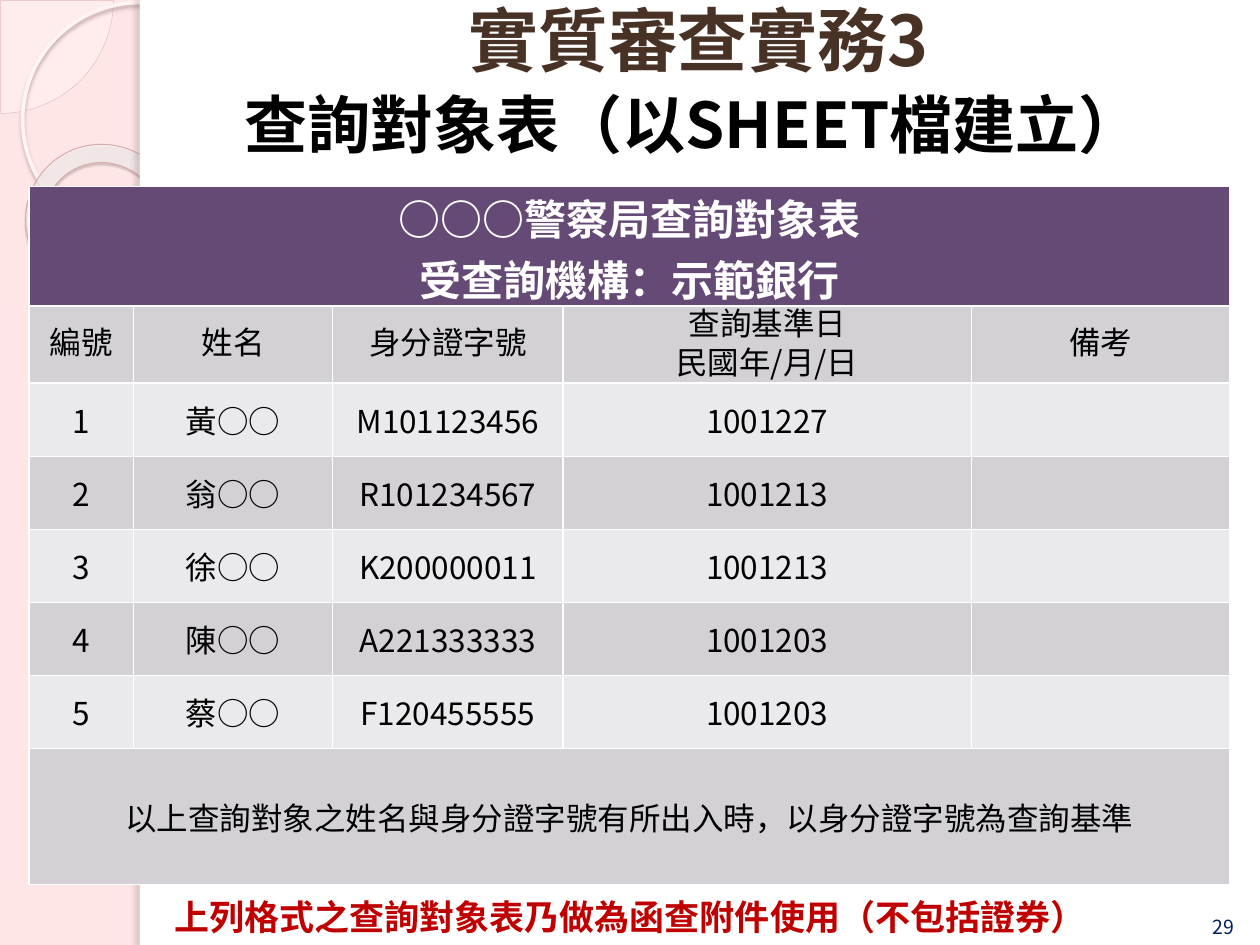
from dataclasses import dataclass

from lxml.etree import SubElement
from pptx import Presentation
from pptx.dml.color import RGBColor
from pptx.enum.shapes import MSO_SHAPE
from pptx.enum.text import MSO_ANCHOR, MSO_AUTO_SIZE, PP_ALIGN
from pptx.oxml import parse_xml
from pptx.oxml.ns import nsdecls, qn
from pptx.util import Inches, Pt


@dataclass(frozen=True)
class Theme:
    font: str = "Noto Sans CJK SC"
    back: str = "FFE6E6"
    white: str = "FFFFFF"
    black: str = "000000"
    brown: str = "483226"
    navy: str = "002060"
    red: str = "C00000"
    purple: str = "654A76"
    dark: str = "D3D0D6"
    light: str = "EAE9EC"
    head: float = 39.8
    title: float = 36
    cap: float = 24
    note: float = 20
    cell: float = 18
    page: float = 11.1


THEME = Theme()

COLS = [0.83, 1.58, 1.83, 3.24, 2.05]
ROWS = [0.95, 0.61] + [0.58] * 5 + [1.08]
CAPTION = "○○○警察局查詢對象表\n受查詢機構：示範銀行"
LABELS = ["編號", "姓名", "身分證字號", "查詢基準日\n民國年/月/日", "備考"]
PEOPLE = [
    ("黃○○", "M101123456", "1001227"),
    ("翁○○", "R101234567", "1001213"),
    ("徐○○", "K200000011", "1001213"),
    ("陳○○", "A221333333", "1001203"),
    ("蔡○○", "F120455555", "1001203"),
]
REMARK = "以上查詢對象之姓名與身分證字號有所出入時，以身分證字號為查詢基準"


def rgb(code):
    return RGBColor.from_string(code)


def write(frame, text, size, color, bold=False, space=None):
    """Put centred text in a frame and format its runs."""
    frame.text = text
    for para in frame.paragraphs:
        para.alignment = PP_ALIGN.CENTER
        if space:
            para.line_spacing = space
        for run in para.runs:
            font = run.font
            font.name, font.size, font.bold = THEME.font, Pt(size), bold
            font.color.rgb = rgb(color)
            latin = run._r.rPr.find(qn("a:latin"))
            latin.addnext(parse_xml(f'<a:ea {nsdecls("a")} typeface="{THEME.font}"/>'))


def place(shape, left, top, width, height):
    shape.left, shape.top = Inches(left), Inches(top)
    shape.width, shape.height = Inches(width), Inches(height)


def add_text(slide, box, text, size, color, anchor, bold=False, space=None):
    shape = slide.shapes.add_textbox(*map(Inches, box))
    frame = shape.text_frame
    frame.word_wrap = True
    frame.vertical_anchor = anchor
    write(frame, text, size, color, bold, space)


def add_form(slide, kind, box, fill=None, line=None, width=0):
    """Add a preset shape with a plain fill and line."""
    shape = slide.shapes.add_shape(kind, *map(Inches, box))
    shape.shadow.inherit = False
    if fill:
        shape.fill.solid()
        shape.fill.fore_color.rgb = rgb(fill)
    else:
        shape.fill.background()
    if line:
        shape.line.color.rgb = rgb(line)
        shape.line.width = Pt(width)
    else:
        shape.line.fill.background()
    return shape


def set_alpha(color, share):
    SubElement(color, qn("a:alpha"), val=str(share * 1000))


def cast(shape, color, share, blur, dist, angle):
    """Give a shape an outer shadow."""
    effects = shape._element.spPr.find(qn("a:effectLst"))
    outer = SubElement(effects, qn("a:outerShdw"), blurRad=str(Pt(blur)),
                       dist=str(Pt(dist)), dir=str(angle * 60000),
                       algn="tl", rotWithShape="0")
    set_alpha(SubElement(outer, qn("a:srgbClr"), val=color), share)


def fade(shape, stops):
    """Swap an empty fill for a round gradient with clear stops."""
    marks = "".join(
        f'<a:gs pos="{pos * 1000}"><a:srgbClr val="{color}">'
        f'<a:alpha val="{share * 1000}"/></a:srgbClr></a:gs>'
        for pos, color, share in stops)
    grad = parse_xml(
        f'<a:gradFill {nsdecls("a")} rotWithShape="1"><a:gsLst>{marks}</a:gsLst>'
        '<a:path path="circle"><a:fillToRect l="-408000" t="-50000" '
        'r="508000" b="150000"/></a:path></a:gradFill>')
    props = shape._element.spPr
    props.replace(props.find(qn("a:noFill")), grad)


def add_decor(slide):
    # Pink margin with a quarter disc, a circle and a ring
    pie = add_form(slide, MSO_SHAPE.PIE, (-0.89, -0.89, 1.79, 1.79),
                   "FFFBFB", "E5BABA", 0.25)
    pie.adjustments[0], pie.adjustments[1] = 0, 54.02
    set_alpha(pie._element.spPr.find(qn("a:solidFill"))[0], 33)

    loop = add_form(slide, MSO_SHAPE.OVAL, (0.18, 0.02, 1.86, 1.86),
                    line="FFF4F4", width=2.15)
    cast(loop, "C1A6A6", 85, 2, 2, 90)

    ring = add_form(slide, MSO_SHAPE.DONUT, (0.2, 1.15, 1.23, 1.21),
                    line="D8ACAC", width=0.58)
    ring.adjustments[0] = 0.12
    ring.rotation = 38.6
    fade(ring, [(0, "FFFAFA", 70), (70, "FFFEFE", 55), (100, "FFADAD", 60)])
    cast(ring, "625050", 35, 1, 1.2, 75)

    # White page and its shaded edge
    add_form(slide, MSO_SHAPE.RECTANGLE, (1.11, 0, 8.89, 7.5), THEME.white)
    edge = add_form(slide, MSO_SHAPE.RECTANGLE, (1.11, 0, 0.08, 7.5), THEME.white)
    cast(edge, "7F7272", 25, 3, 3, 180)


def fill_cell(cell, text, fill, size=THEME.cell, color=THEME.black,
              bold=False, space=None):
    cell.fill.solid()
    cell.fill.fore_color.rgb = rgb(fill)
    cell.vertical_anchor = MSO_ANCHOR.MIDDLE
    cell.margin_left = cell.margin_right = Inches(0.02)
    cell.margin_top = cell.margin_bottom = 0
    write(cell.text_frame, text, size, color, bold, space)


def add_grid(slide):
    box = (0.23, 1.48, sum(COLS), sum(ROWS))
    grid = slide.shapes.add_table(len(ROWS), len(COLS), *map(Inches, box)).table
    grid.horz_banding = False
    for col, width in zip(grid.columns, COLS):
        col.width = Inches(width)
    for row, height in zip(grid.rows, ROWS):
        row.height = Inches(height)

    # Caption and remark span the whole width
    last = len(ROWS) - 1
    for row in (0, last):
        grid.cell(row, 0).merge(grid.cell(row, len(COLS) - 1))
    fill_cell(grid.cell(0, 0), CAPTION, THEME.purple, THEME.cap, THEME.white, True)
    fill_cell(grid.cell(last, 0), REMARK, THEME.dark)

    # Labels, then one numbered row for each person
    for col, text in enumerate(LABELS):
        fill_cell(grid.cell(1, col), text, THEME.dark, space=Pt(22))
    for num, person in enumerate(PEOPLE, 1):
        fill = THEME.light if num % 2 else THEME.dark
        for col, text in enumerate((str(num), *person, "")):
            fill_cell(grid.cell(num + 1, col), text, fill)


def add_title(slide):
    title = slide.shapes.title
    place(title, 1, 0.55, 9, 0.85)
    frame = title.text_frame
    frame.auto_size = MSO_AUTO_SIZE.NONE
    frame.vertical_anchor = MSO_ANCHOR.MIDDLE
    write(frame, "查詢對象表（以SHEET檔建立）", THEME.title, THEME.black, True)


def main():
    deck = Presentation()
    deck.slide_width, deck.slide_height = Inches(10), Inches(7.5)
    slide = deck.slides.add_slide(deck.slide_layouts[5])
    slide.background.fill.solid()
    slide.background.fill.fore_color.rgb = rgb(THEME.back)

    add_decor(slide)
    # Bring the title in front of the white page
    slide.shapes._spTree.append(slide.shapes.title._element)
    add_title(slide)
    add_text(slide, (9.42, 7.23, 0.58, 0.27), "29", THEME.page, THEME.navy,
             MSO_ANCHOR.BOTTOM)
    add_grid(slide)

    # Note below the table and heading above the title
    add_text(slide, (0.31, 7.06, 9.38, 0.44),
             "上列格式之查詢對象表乃做為函查附件使用（不包括證券）",
             THEME.note, THEME.red, MSO_ANCHOR.TOP, True)
    add_text(slide, (1.33, 0, 8.43, 0.7), "實質審查實務3", THEME.head,
             THEME.brown, MSO_ANCHOR.MIDDLE, True, 0.9)
    deck.save("out.pptx")


if __name__ == "__main__":
    main()
